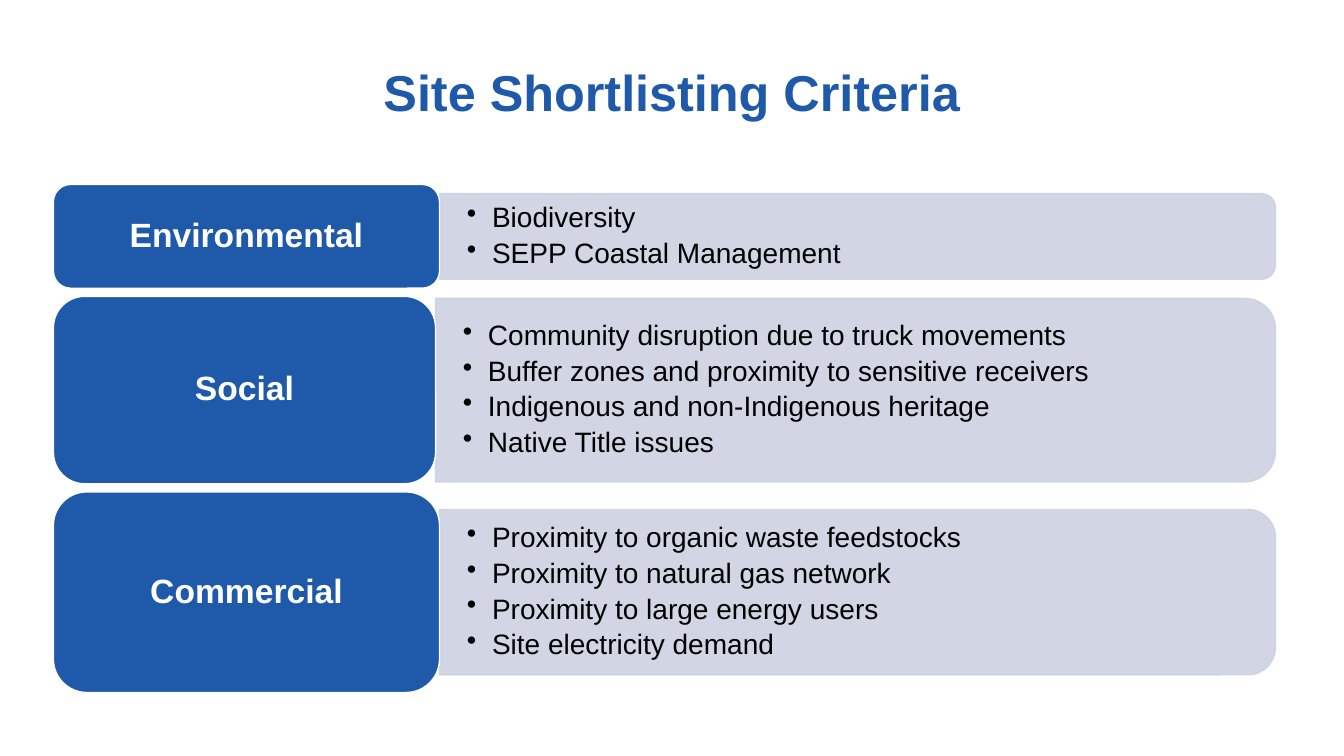
from lxml import etree
from pptx import Presentation
from pptx.dml.color import RGBColor
from pptx.enum.shapes import MSO_SHAPE
from pptx.enum.text import MSO_ANCHOR, MSO_AUTO_SIZE, PP_ALIGN
from pptx.oxml.ns import qn
from pptx.util import Inches, Pt

BLUE = RGBColor(0x1F, 0x59, 0xA9)
LAVENDER = RGBColor(0xCD, 0xD1, 0xE2)
WHITE = RGBColor(0xFF, 0xFF, 0xFF)
BLACK = RGBColor(0x00, 0x00, 0x00)
ROUNDED = MSO_SHAPE.ROUNDED_RECTANGLE
ROUNDED_TOP = MSO_SHAPE.ROUND_2_SAME_RECTANGLE
MIDDLE = MSO_ANCHOR.MIDDLE
CENTER = PP_ALIGN.CENTER
NO_AUTOFIT = MSO_AUTO_SIZE.NONE

LABEL_LEFT = 0.53
PANEL_RIGHT = 12.65

# Label, label top, label width, label height, panel height, criteria
CRITERIA = [
    ("Environmental", 1.83, 3.83, 1.03, 0.85,
     ["Biodiversity", "SEPP Coastal Management"]),
    ("Social", 2.94, 3.79, 1.86, 1.82,
     ["Community disruption due to truck movements",
      "Buffer zones and proximity to sensitive receivers",
      "Indigenous and non-Indigenous heritage",
      "Native Title issues"]),
    ("Commercial", 4.88, 3.83, 1.99, 1.64,
     ["Proximity to organic waste feedstocks",
      "Proximity to natural gas network",
      "Proximity to large energy users",
      "Site electricity demand"]),
]


class CriteriaSlide:
    font_name = "Arial"

    def __init__(self, presentation):
        self.slide = presentation.slides.add_slide(presentation.slide_layouts[5])

    def style_font(self, font, size, color, bold=False):
        font.name = self.font_name
        font.size = Pt(size)
        font.color.rgb = color
        font.bold = bold

    def add_title(self, text):
        title = self.slide.shapes.title
        title.left, title.top = Inches(2.48), Inches(0.55)
        title.width, title.height = Inches(8.37), Inches(0.71)
        frame = title.text_frame
        frame.text = text
        frame.auto_size = NO_AUTOFIT
        frame.vertical_anchor = MIDDLE
        paragraph = frame.paragraphs[0]
        paragraph.alignment = CENTER
        self.style_font(paragraph.runs[0].font, 36, BLUE, bold=True)

    def add_box(self, kind, left, top, width, height, fill, line):
        shape = self.slide.shapes.add_shape(
            kind, Inches(left), Inches(top), Inches(width), Inches(height))
        shape.shadow.inherit = False
        shape.fill.solid()
        shape.fill.fore_color.rgb = fill
        shape.line.color.rgb = line
        shape.line.width = Pt(1)
        return shape

    def add_panel(self, left, center, width, height):
        """Add a panel with rounded right corners: a turned, round-topped box."""
        middle = left + width / 2
        panel = self.add_box(ROUNDED_TOP, middle - height / 2, center - width / 2,
                             height, width, LAVENDER, LAVENDER)
        panel.rotation = 90
        for color in panel.element.spPr.iter(qn("a:srgbClr")):
            etree.SubElement(color, qn("a:alpha"), val="90000")

    def add_bullets(self, left, top, width, height, items):
        box = self.slide.shapes.add_textbox(
            Inches(left), Inches(top), Inches(width), Inches(height))
        frame = box.text_frame
        frame.word_wrap = True
        frame.vertical_anchor = MIDDLE
        frame.margin_left = frame.margin_right = Inches(0.27)
        frame.margin_top = frame.margin_bottom = Inches(0.14)
        frame.text = "\n".join(items)
        for paragraph in frame.paragraphs:
            paragraph.line_spacing = 0.9
            paragraph.space_after = Pt(3.8)
            properties = paragraph._p.get_or_add_pPr()
            properties.set("marL", str(Inches(0.25)))
            properties.set("indent", str(Inches(-0.25)))
            etree.SubElement(properties, qn("a:buChar"), char="•")
            self.style_font(paragraph.runs[0].font, 20, BLACK)

    def add_label(self, text, left, top, width, height):
        label = self.add_box(ROUNDED, left, top, width, height, BLUE, WHITE)
        frame = label.text_frame
        frame.text = text
        frame.vertical_anchor = MIDDLE
        paragraph = frame.paragraphs[0]
        paragraph.alignment = CENTER
        paragraph.line_spacing = 0.9
        self.style_font(paragraph.runs[0].font, 24, WHITE, bold=True)

    def add_criterion(self, name, top, label_width, label_height, panel_height, items):
        center = top + label_height / 2
        panel_left = LABEL_LEFT + label_width
        panel_width = PANEL_RIGHT - panel_left
        self.add_panel(panel_left, center, panel_width, panel_height)
        self.add_bullets(panel_left, center - panel_height / 2,
                         panel_width, panel_height, items)
        self.add_label(name, LABEL_LEFT, top, label_width, label_height)


def main():
    presentation = Presentation()
    presentation.slide_width = Inches(13.33)
    presentation.slide_height = Inches(7.5)
    criteria_slide = CriteriaSlide(presentation)
    criteria_slide.add_title("Site Shortlisting Criteria")
    for criterion in CRITERIA:
        criteria_slide.add_criterion(*criterion)
    presentation.save("out.pptx")


if __name__ == "__main__":
    main()
